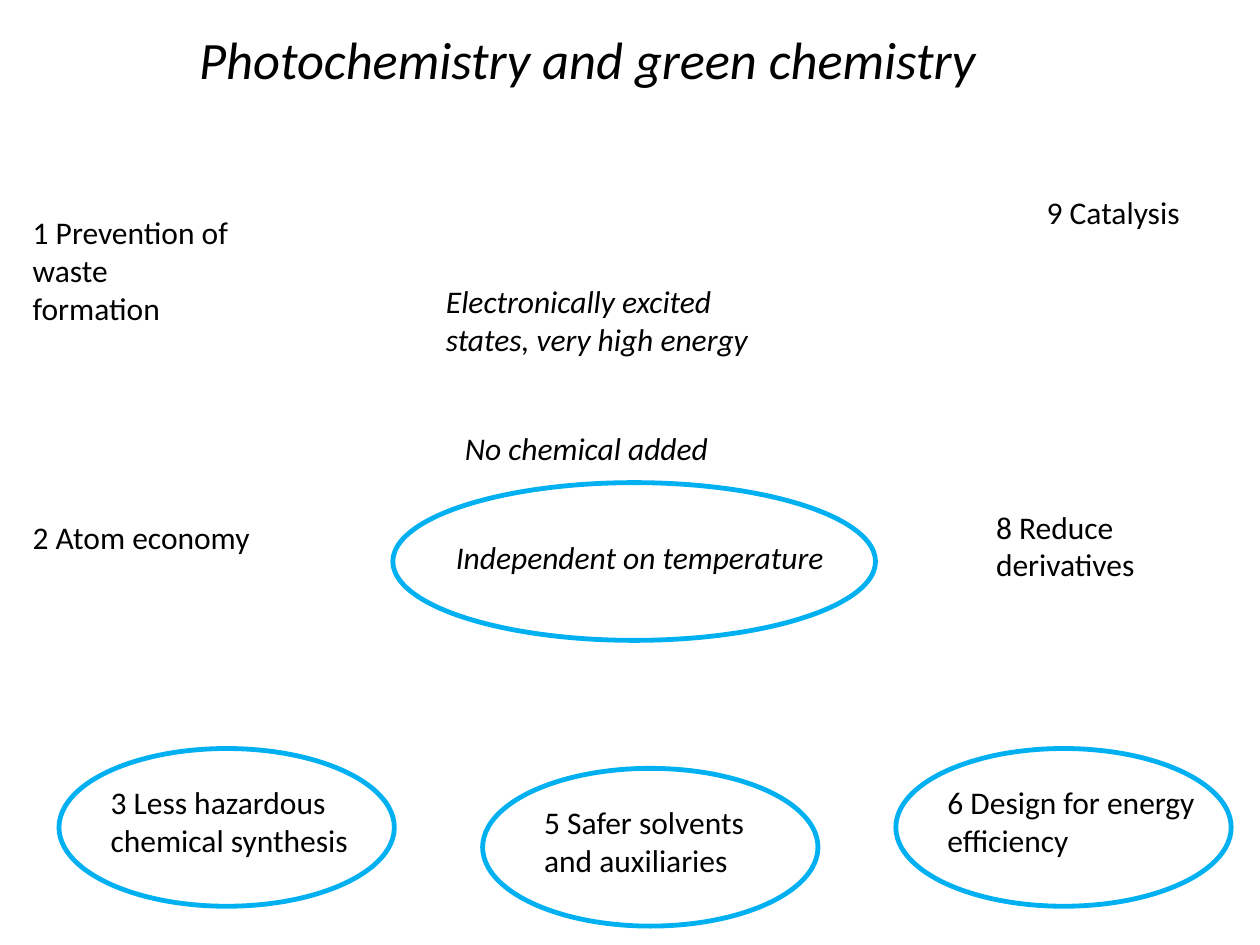
import pptx
import pptx.util
import pptx.dml.color
import pptx.enum.shapes
import pptx.enum.text

Cm, Pt = pptx.util.Cm, pptx.util.Pt
COLORS = {"text": "000000", "ring": "00B0F0", "background": "FFFFFF"}
FONT = "Calibri"
ONE_LINE, TWO_LINES, THREE_LINES = 1.02, 1.8, 2.57
RING_H = 3.18


def rgb(name):
    return pptx.dml.color.RGBColor.from_string(COLORS[name])


def style(p, size, italic):
    p.alignment = pptx.enum.text.PP_ALIGN.LEFT
    p.font.name = FONT
    p.font.size = Pt(size)
    p.font.italic = italic
    p.font.color.rgb = rgb("text")


def add_title(s, box, text):
    sp = s.shapes.title
    sp.left, sp.top, sp.width, sp.height = (Cm(v) for v in box)
    tf = sp.text_frame
    tf.text = text
    tf.vertical_anchor = pptx.enum.text.MSO_ANCHOR.TOP
    tf.auto_size = pptx.enum.text.MSO_AUTO_SIZE.NONE
    style(tf.paragraphs[0], 30, True)


def add_label(s, box, text, italic=False):
    tf = s.shapes.add_textbox(*(Cm(v) for v in box)).text_frame
    tf.word_wrap = True
    tf.auto_size = pptx.enum.text.MSO_AUTO_SIZE.SHAPE_TO_FIT_TEXT
    tf.text = text
    for p in tf.paragraphs:
        style(p, 18, italic)


def add_ring(s, box):
    sp = s.shapes.add_shape(pptx.enum.shapes.MSO_SHAPE.OVAL, *(Cm(v) for v in box))
    sp.shadow.inherit = False
    sp.fill.background()
    sp.line.color.rgb = rgb("ring")
    sp.line.width = Pt(2.75)


def add_side_principles(s, box):
    x, y, w, h = box
    right = x + w
    add_label(s, (x, y + 0.41, 5.94, THREE_LINES), "1 Prevention of waste\nformation")
    add_label(s, (x, y + 6.55, 5.16, ONE_LINE), "2 Atom economy")
    add_label(s, (right - 4.78, y + 6.35, 4.78, TWO_LINES), "8 Reduce derivatives")
    add_label(s, (right - 3.76, y, 3.76, ONE_LINE), "9 Catalysis")


def add_light_properties(s, box):
    x, y, w, h = box
    add_label(s, (x + 0.82, y, 6.93, TWO_LINES),
              "Electronically excited states, very high energy", True)
    add_label(s, (x + 1.2, y + 2.97, 7.14, ONE_LINE), "No chemical added", True)
    add_label(s, (x + 1.02, y + 5.16, 8.53, ONE_LINE), "Independent on temperature", True)
    add_ring(s, (x, y + h - RING_H, w, RING_H))


def add_ringed_principles(s, box):
    x, y, w, h = box
    ring_w = 6.76
    principles = [
        (0, 0, 0.79, 5.77, "3 Less hazardous chemical synthesis"),
        (8.54, 0.4, 0.99, 5.16, "5 Safer solvents and auxiliaries"),
        (w - ring_w, 0, 0.79, 5.94, "6 Design for energy efficiency"),
    ]
    for dx, dy, indent, label_w, text in principles:
        add_label(s, (x + dx + indent, y + dy + 0.58, label_w, TWO_LINES), text)
        add_ring(s, (x + dx, y + dy, ring_w, RING_H))


def main():
    prs = pptx.Presentation()
    prs.slide_width, prs.slide_height = Cm(25.4), Cm(19.05)
    s = prs.slides.add_slide(prs.slide_layouts[5])
    s.background.fill.solid()
    s.background.fill.fore_color.rgb = rgb("background")
    add_title(s, (3.76, 0.41, 20.78, 1.55), "Photochemistry and green chemistry")
    add_side_principles(s, (0.41, 3.76, 24.2, 8.15))
    add_light_properties(s, (7.92, 5.56, 9.73, 7.35))
    add_ringed_principles(s, (1.19, 15.09, 23.63, 3.58))
    prs.save("out.pptx")


if __name__ == "__main__":
    main()
